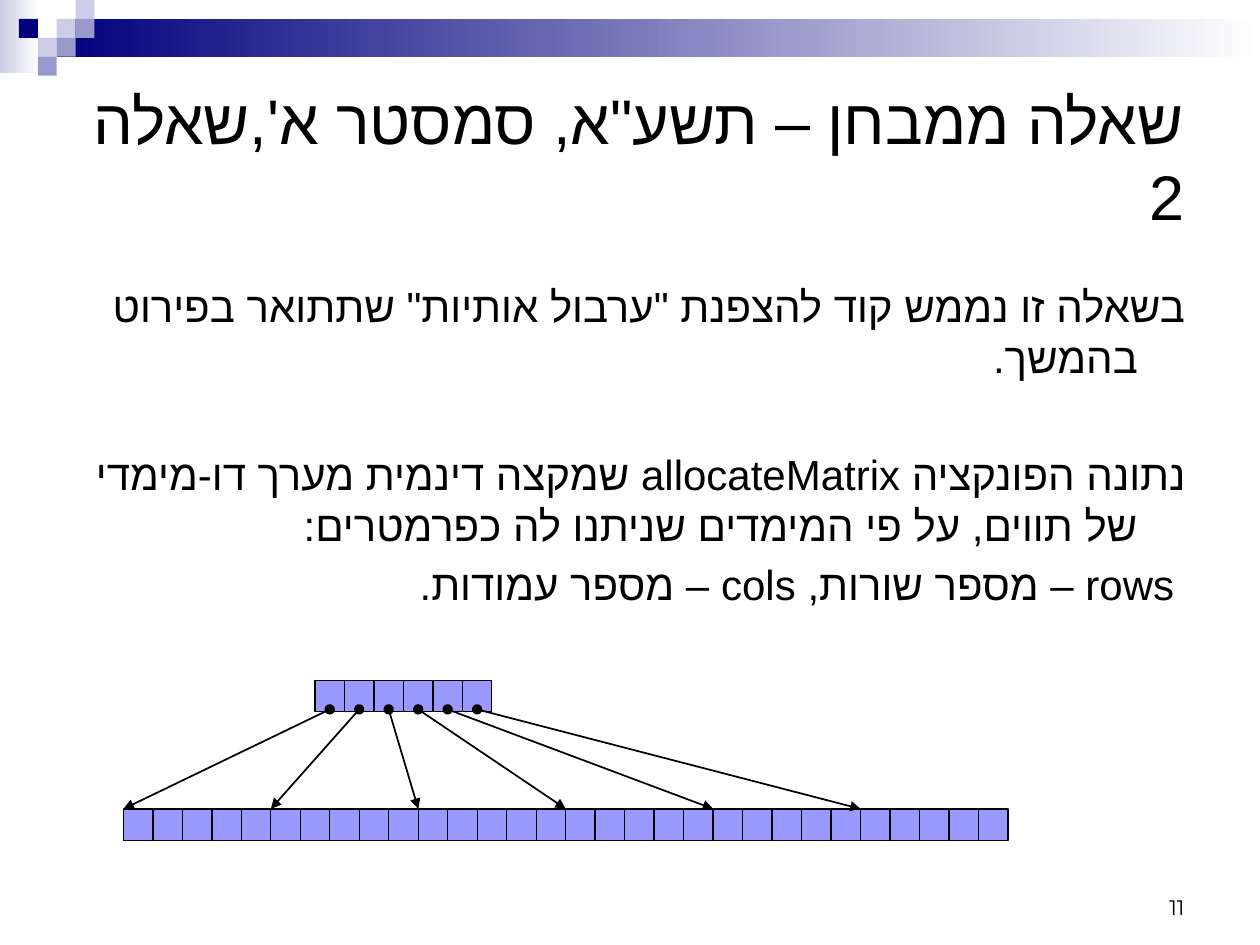
from dataclasses import dataclass

from lxml.etree import SubElement
from pptx import Presentation
from pptx.dml.color import RGBColor
from pptx.enum.shapes import MSO_CONNECTOR, MSO_SHAPE
from pptx.enum.text import MSO_ANCHOR, MSO_AUTO_SIZE, PP_ALIGN
from pptx.oxml.ns import qn
from pptx.slide import Slide
from pptx.util import Inches, Pt


def color(value):
    """Turn a hex string into a colour."""
    return RGBColor.from_string(value)


@dataclass
class MatrixSlide:
    """Holds the style and the current slide."""
    slide: Slide
    ink: str = "000000"
    cell_fill: str = "9999FF"
    font: str = "Arial"

    def block(self, left, top, width, height, fill, fade=None, outline=False):
        """Add a rectangle with a solid or fading fill."""
        block = self.slide.shapes.add_shape(
            MSO_SHAPE.RECTANGLE, Inches(left), Inches(top), Inches(width), Inches(height))
        block.shadow.inherit = False
        if fade:
            block.fill.gradient()
            block.fill.gradient_angle = 0
            for stop, position, shade in zip(block.fill.gradient_stops, (0, 1), (fill, fade)):
                stop.position = position
                stop.color.rgb = color(shade)
        else:
            block.fill.solid()
            block.fill.fore_color.rgb = color(fill)
        if outline:
            block.line.color.rgb = color(self.ink)
            block.line.width = Pt(0.75)
        else:
            block.line.fill.background()

    def cells(self, left, top, count, pitch, height):
        """Add a row of touching array cells."""
        for index in range(count):
            self.block(left + index * pitch, top, pitch, height, self.cell_fill, outline=True)

    def pointer(self, start, end):
        """Add an arrow that starts with a dot."""
        pointer = self.slide.shapes.add_connector(
            MSO_CONNECTOR.STRAIGHT, *map(Inches, (*start, *end)))
        pointer.line.color.rgb = color(self.ink)
        pointer.line.width = Pt(1)
        properties = pointer.line._get_or_add_ln()
        SubElement(properties, qn("a:headEnd"), type="oval")
        SubElement(properties, qn("a:tailEnd"), type="triangle")
        SubElement(pointer._element.spPr, qn("a:effectLst"))

    def paragraph(self, paragraph, text, size, font=None, rtl=True):
        """Fill and format one right-aligned paragraph."""
        paragraph.text = text
        paragraph.alignment = PP_ALIGN.RIGHT
        paragraph.font.size = Pt(size)
        paragraph.font.name = font or self.font
        paragraph.font.color.rgb = color(self.ink)
        if rtl:
            paragraph._p.get_or_add_pPr().set("rtl", "1")
            for run in paragraph.runs:
                SubElement(run._r.get_or_add_rPr(), qn("a:cs"), typeface=self.font)

    def title(self, text, left, top, width, height):
        """Place and fill the title placeholder."""
        title = self.slide.shapes.title
        title.left, title.top, title.width, title.height = map(
            Inches, (left, top, width, height))
        title.text_frame.auto_size = MSO_AUTO_SIZE.NONE
        title.text_frame.vertical_anchor = MSO_ANCHOR.MIDDLE
        self.paragraph(title.text_frame.paragraphs[0], text, 36)

    def text_frame(self, left, top, width, height, anchor=MSO_ANCHOR.TOP):
        """Add a wrapping text box and return its frame."""
        frame = self.slide.shapes.add_textbox(
            Inches(left), Inches(top), Inches(width), Inches(height)).text_frame
        frame.word_wrap = True
        frame.vertical_anchor = anchor
        return frame

    def body(self, passages, left, top, width, height):
        """Add hanging paragraphs, each with its space before."""
        frame = self.text_frame(left, top, width, height)
        for index, (text, space) in enumerate(passages):
            passage = frame.add_paragraph() if index else frame.paragraphs[0]
            self.paragraph(passage, text, 24)
            passage.space_before = Pt(space)
            indents = passage._p.get_or_add_pPr()
            indents.set("marL", str(Inches(0.38)))
            indents.set("indent", str(Inches(-0.38)))

    def page_number(self, text, left, top, width, height):
        """Add the page number."""
        frame = self.text_frame(left, top, width, height, MSO_ANCHOR.BOTTOM)
        self.paragraph(frame.paragraphs[0], text, 12, "Montserrat", rtl=False)


def main():
    """Build the slide and save it."""
    deck = Presentation()
    deck.slide_width, deck.slide_height = Inches(10), Inches(7.5)
    page = MatrixSlide(deck.slides.add_slide(deck.slide_layouts[5]))

    navy, lilac, violet, white = "00007D", "CCCCE6", "9999CC", "FFFFFF"
    page.block(0, 0, 0.31, 0.58, lilac, fade=white)
    page.block(0.45, 0.15, 9.55, 0.3, navy, fade=white)
    tile = 0.15
    mosaic = [(3, 1, lilac), (4, 0, lilac), (4, 1, violet), (2, 2, lilac),
              (1, 1, navy), (3, 2, violet), (2, 3, violet)]
    for column, row, shade in mosaic:
        page.block(column * tile, row * tile, tile, tile, shade)

    page.title("שאלה ממבחן – תשע\"א, סמסטר א',שאלה 2", 0.5, 0.5, 9, 1.5)
    page.body([
        ("בשאלה זו נממש קוד להצפנת \"ערבול אותיות\" שתתואר בפירוט בהמשך.", 0),
        ("נתונה הפונקציה allocateMatrix שמקצה דינמית מערך דו-מימדי של תווים, "
         "על פי המימדים שניתנו לה כפרמטרים:", 38.4),
        (" rows – מספר שורות, cols – מספר עמודות.", 4.8),
    ], 0.51, 2.18, 9, 3.1)
    page.page_number("11", 7.17, 6.95, 2.33, 0.4)

    rows, cols, pitch, height = 6, 5, 0.234, 0.25
    rows_left, rows_top = 2.5, 5.4
    data_left, data_top = 0.98, 6.42
    page.cells(rows_left, rows_top, rows, pitch, height)
    page.cells(data_left, data_top, rows * cols, pitch, height)
    for row in range(rows):
        page.pointer((rows_left + (row + 0.5) * pitch, 5.63),
                     (data_left + row * cols * pitch, data_top))

    deck.save("out.pptx")


if __name__ == "__main__":
    main()
